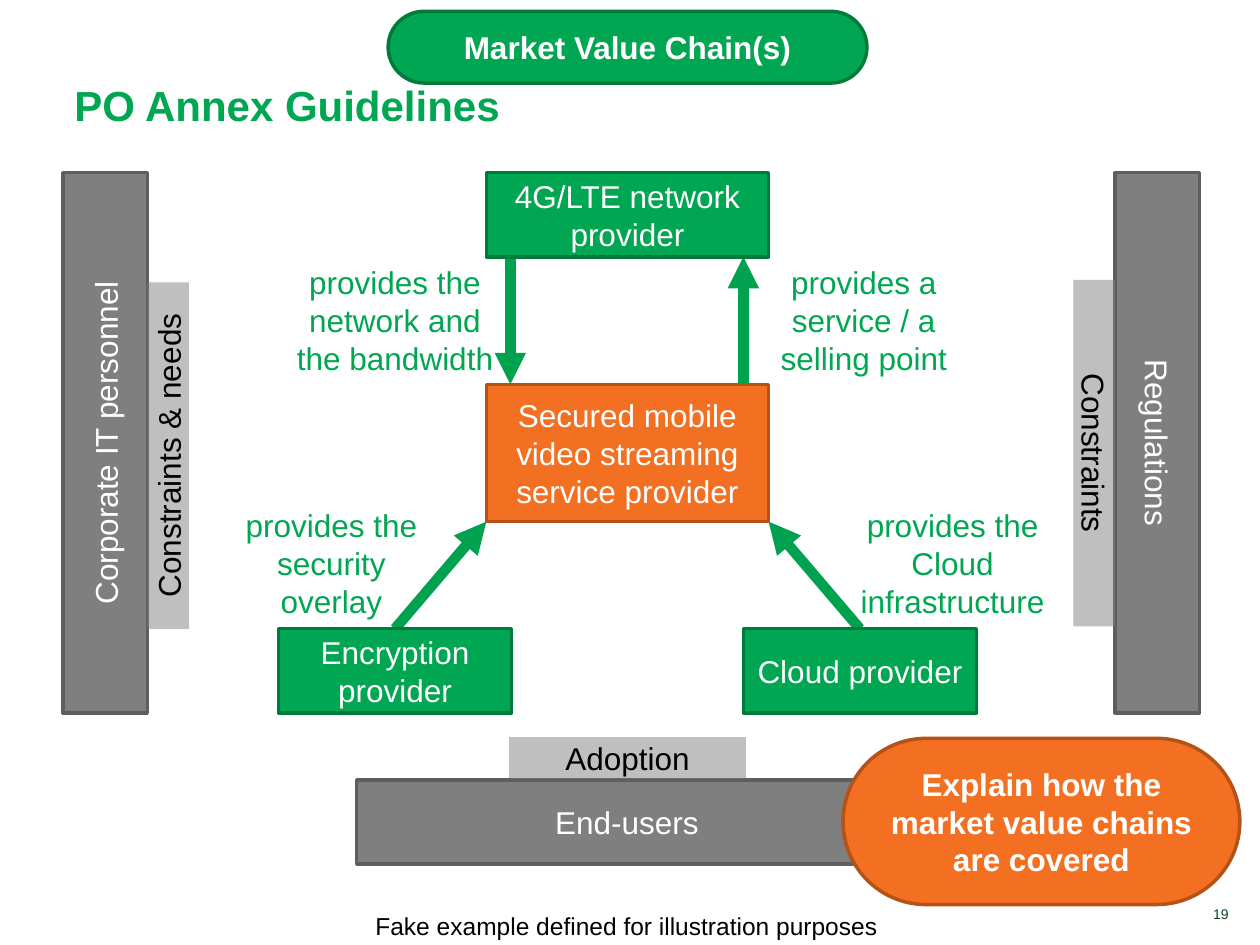
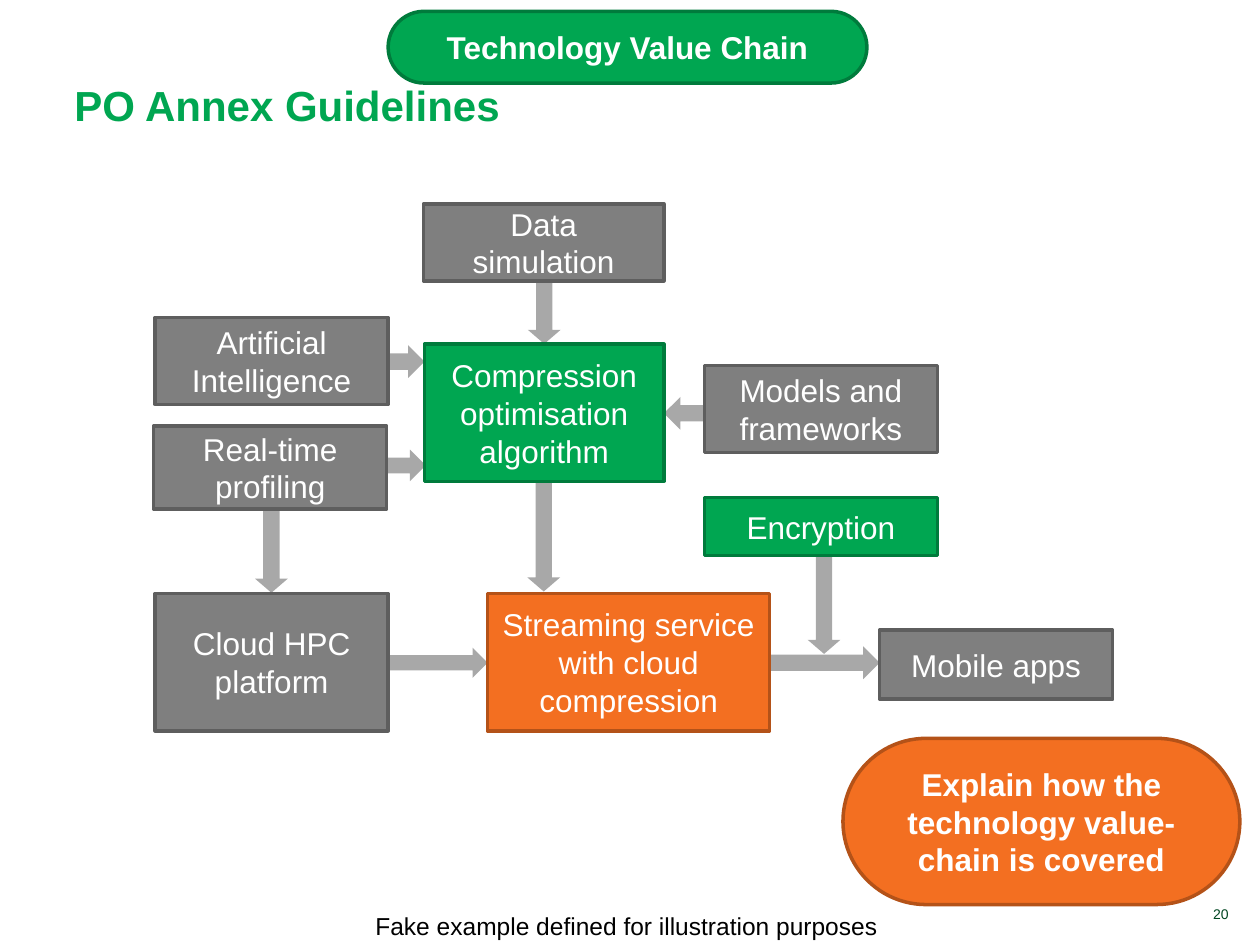
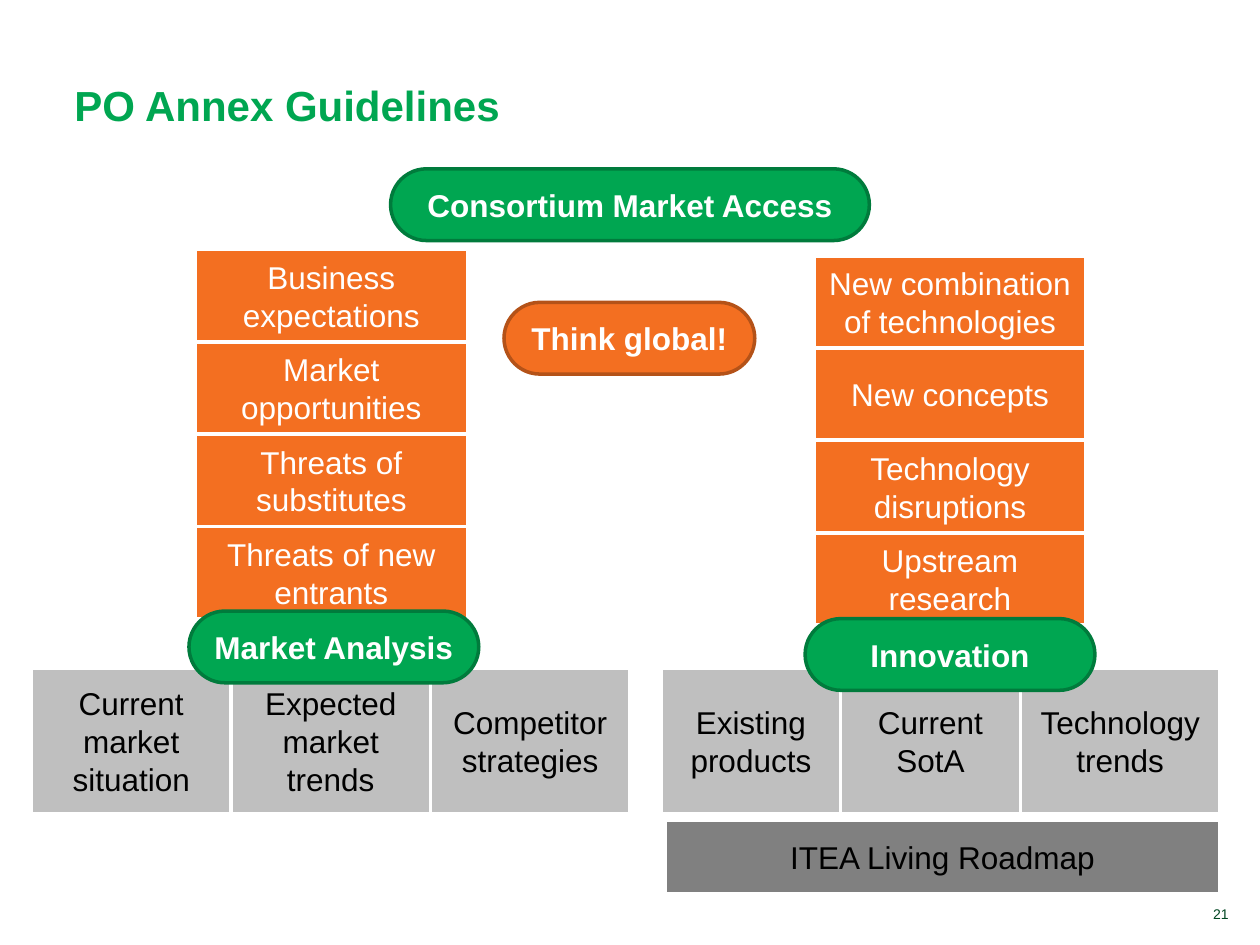
from dataclasses import dataclass
from typing import Any

from lxml import etree
from pptx import Presentation
from pptx import util as u
from pptx.dml.color import RGBColor
from pptx.enum import shapes, text
from pptx.oxml.ns import qn

FONT = "Arial"
GREEN, DARK_GREEN, ARROW_GREEN = "00A651", "007B3C", "00A24F"
ORANGE, DARK_ORANGE = "F36F21", "B45218"
GREY, DARK_GREY, ARROW_GREY = "7F7F7F", "5E5E5E", "A8A8A8"
MID_GREY, LIGHT_GREY = "808080", "BFBFBF"
WHITE, BLACK, NUMBER_GREEN = "FFFFFF", "000000", "004621"

RECT = shapes.MSO_SHAPE.RECTANGLE
PILL = shapes.MSO_SHAPE.ROUNDED_RECTANGLE
ARROW = shapes.MSO_SHAPE.RIGHT_ARROW
LEFT, CENTER, RIGHT = text.PP_ALIGN.LEFT, text.PP_ALIGN.CENTER, text.PP_ALIGN.RIGHT

PILL_HEIGHT = 41
SIDE_TOP = 98.6
PARTNER_WIDTH, PARTNER_HEIGHT = 133.2, 48.2
STACK_WIDTH, STACK_HEIGHT, STACK_STEP = 155.5, 52.6, 52.8
BASE_TOP, BASE_HEIGHT = 381.6, 83.5


@dataclass(frozen=True)
class Style:
    fill: str
    line: str | None = None
    color: str = WHITE
    bold: bool = False
    shape: Any = RECT
    alpha: int = 100


@dataclass(frozen=True)
class Box:
    words: str
    left: float
    top: float
    width: float
    height: float
    style: Style
    rotation: int = 0


@dataclass(frozen=True)
class Label:
    words: str
    left: float
    top: float
    width: float
    height: float
    size: int = 18
    color: str = GREEN
    align: Any = CENTER
    anchor: Any = text.MSO_ANCHOR.TOP
    wrap: bool = True


@dataclass(frozen=True)
class BlockArrow:
    left: float
    top: float
    length: float
    thickness: float = 18.7
    rotation: int = 0


GREEN_BOX = Style(GREEN, DARK_GREEN)
ORANGE_BOX = Style(ORANGE, DARK_ORANGE)
GREY_BOX = Style(GREY, DARK_GREY)
NOTE = Style(MID_GREY, color=BLACK, alpha=50)
GREEN_PILL = Style(GREEN, DARK_GREEN, bold=True, shape=PILL)
ORANGE_PILL = Style(ORANGE, DARK_ORANGE, bold=True, shape=PILL)
STACK = Style(ORANGE, WHITE)
BASE = Style(LIGHT_GREY, WHITE, BLACK)
ROADMAP = Style(MID_GREY, WHITE, BLACK)


def rgb(color: str) -> RGBColor:
    return RGBColor.from_string(color)


def write(frame: Any, words: str, size: int, color: str, align: Any, bold: bool = False) -> None:
    frame.text = words
    for para in frame.paragraphs:
        para.alignment = align
        para.font.name = FONT
        para.font.size = u.Pt(size)
        para.font.bold = bold
        para.font.color.rgb = rgb(color)


def draw_box(page: Any, box: Box) -> Any:
    style = box.style
    shape = page.shapes.add_shape(
        style.shape, u.Pt(box.left), u.Pt(box.top), u.Pt(box.width), u.Pt(box.height))
    shape.rotation = box.rotation
    shape.shadow.inherit = False
    shape.fill.solid()
    shape.fill.fore_color.rgb = rgb(style.fill)
    if style.alpha < 100:
        fill_color = shape.element.spPr.find(f"{qn('a:solidFill')}/{qn('a:srgbClr')}")
        etree.SubElement(fill_color, qn("a:alpha"), val=str(style.alpha * 1000))
    if style.line:
        shape.line.color.rgb = rgb(style.line)
        shape.line.width = u.Pt(2)
    else:
        shape.line.fill.background()
    if style.shape == PILL:
        shape.adjustments[0] = 0.5
    if box.words:
        shape.text_frame.vertical_anchor = text.MSO_ANCHOR.MIDDLE
        write(shape.text_frame, box.words, 18, style.color, CENTER, style.bold)
    return shape


def draw_label(page: Any, label: Label) -> None:
    frame = page.shapes.add_textbox(
        u.Pt(label.left), u.Pt(label.top), u.Pt(label.width), u.Pt(label.height)).text_frame
    frame.word_wrap = label.wrap
    frame.auto_size = text.MSO_AUTO_SIZE.SHAPE_TO_FIT_TEXT
    frame.vertical_anchor = label.anchor
    write(frame, label.words, label.size, label.color, label.align)


def draw_block_arrow(page: Any, arrow: BlockArrow) -> None:
    shape = draw_box(page, Box("", arrow.left, arrow.top, arrow.length, arrow.thickness,
                               Style(ARROW_GREY, shape=ARROW), arrow.rotation))
    if arrow.rotation == 90:
        shape.adjustments[1] = 0.43


def draw_arrow(page: Any, x1: float, y1: float, x2: float, y2: float) -> Any:
    arrow = page.shapes.add_connector(
        shapes.MSO_CONNECTOR.STRAIGHT, u.Pt(x1), u.Pt(y1), u.Pt(x2), u.Pt(y2))
    arrow.line.color.rgb = rgb(ARROW_GREEN)
    arrow.line.width = u.Pt(6)
    properties = arrow.element.spPr
    etree.SubElement(properties.find(qn("a:ln")), qn("a:tailEnd"), type="triangle")
    etree.SubElement(properties, qn("a:effectLst"))
    return arrow


def add_page(deck: Any, number: int) -> Any:
    page = deck.slides.add_slide(deck.slide_layouts[5])
    title = page.shapes.title
    title.left, title.top = u.Pt(35.3), u.Pt(12.2)
    title.width, title.height = u.Pt(490.3), u.Pt(65.5)
    title.text_frame.vertical_anchor = text.MSO_ANCHOR.BOTTOM
    write(title.text_frame, "PO Annex Guidelines", 24, GREEN, LEFT, True)
    draw_label(page, Label(str(number), 614.9, 514.1, 94.3, 16.6, 8, NUMBER_GREEN,
                           RIGHT, text.MSO_ANCHOR.BOTTOM))
    return page


def add_example_frame(page: Any, heading: str, advice: str) -> None:
    draw_box(page, Box(heading, 221.8, 6.5, 273.6, PILL_HEIGHT, GREEN_PILL))
    draw_box(page, Box(advice, 481.7, 421.9, 226.8, 95, ORANGE_PILL))
    draw_label(page, Label("Fake example defined for illustration purposes",
                           207.4, 517, 302.4, 24.5, 14, BLACK, LEFT, wrap=False))


def add_market_chain(deck: Any) -> None:
    page = add_page(deck, 19)
    provider_left, provider_width = 277.9, 161.3
    provider_right = provider_left + provider_width
    provider_top, provider_bottom = 219.6, 298.1
    network_bottom = SIDE_TOP + PARTNER_HEIGHT
    partner_top = 359.3

    from_cloud = draw_arrow(page, 491.4, partner_top, provider_right, provider_bottom)
    from_encryption = draw_arrow(page, 225.7, partner_top, provider_left, provider_bottom)
    draw_arrow(page, 424.8, provider_top, 424.8, network_bottom)
    draw_arrow(page, 291.6, network_bottom, 291.6, provider_top)

    draw_box(page, Box("Secured mobile video streaming service provider", provider_left,
                       provider_top, provider_width, provider_bottom - provider_top, ORANGE_BOX))
    draw_box(page, Box("4G/LTE network provider", provider_left, SIDE_TOP,
                       provider_width, PARTNER_HEIGHT, GREEN_BOX))
    for words, left, arrow in (("Cloud provider", 424.8, from_cloud),
                               ("Encryption provider", 159.1, from_encryption)):
        partner = draw_box(page, Box(words, left, partner_top, PARTNER_WIDTH,
                                     PARTNER_HEIGHT, GREEN_BOX))
        arrow.begin_connect(partner, 0)

    for label in (
        Label("provides the Cloud\ninfrastructure", 481.7, 285.8, 125.3, 72.7),
        Label("provides the security overlay", 126.7, 285.8, 125.3, 72.7),
        Label("provides a service / a selling point", 429.1, 146.9, 128.9, 72.7),
        Label("provides the network and the bandwidth", 159.1, 146.9, 133.2, 72.7),
    ):
        draw_label(page, label)

    for words, left, top, rotation in (("Corporate IT personnel", -94.3, 229, 270),
                                       ("Regulations", 506.9, 229, 90),
                                       ("End-users", 203.8, 445.7, 0)):
        draw_box(page, Box(words, left, top, 308.9, PARTNER_HEIGHT, GREY_BOX, rotation))
    add_example_frame(page, "Market Value Chain(s)",
                      "Explain how the market value chains are covered")
    for words, left, top, width, rotation in (("Adoption", 290.9, 421.2, 135.4, 0),
                                              ("Constraints & needs", -2.9, 248.4, 198, 270),
                                              ("Constraints", 526.3, 247, 198, 90)):
        draw_box(page, Box(words, left, top, width, 23.8, NOTE, rotation))


def add_technology_chain(deck: Any) -> None:
    page = add_page(deck, 20)
    for arrow in (
        BlockArrow(379.4, 226.8, 23, rotation=180),
        BlockArrow(221, 257, 22.3, 18),
        BlockArrow(221, 197.3, 21.6),
        BlockArrow(293, 169.2, 36, rotation=90),
        BlockArrow(131, 305.3, 48.2, rotation=90),
        BlockArrow(279.4, 297.4, 62.6, rotation=90),
        BlockArrow(442.8, 336.2, 56.2, rotation=90),
        BlockArrow(222.5, 370.1, 56.2, 17.3),
        BlockArrow(439.2, 369.4, 63.4),
    ):
        draw_block_arrow(page, arrow)
    add_example_frame(page, "Technology Value Chain",
                      "Explain how the technology value-chain is covered")
    for box in (
        Box("Streaming service\nwith cloud compression", 278.6, 339.1, 161.3, 78.5, ORANGE_BOX),
        Box("Cloud HPC platform", 88.6, 339.1, PARTNER_WIDTH, 78.5, GREY_BOX),
        Box("Mobile apps", 502.6, 360, PARTNER_WIDTH, 39.6, GREY_BOX),
        Box("Encryption", 402.5, 284.4, PARTNER_WIDTH, 33.1, GREEN_BOX),
        Box("Compression optimisation algorithm", 242.6, 196.6, 136.8, 78.5, GREEN_BOX),
        Box("Real-time profiling", 87.8, 243.4, PARTNER_WIDTH, 47.5, GREY_BOX),
        Box("Artificial Intelligence", 88.6, 181.4, PARTNER_WIDTH, 49.7, GREY_BOX),
        Box("Models and frameworks", 402.5, 208.8, PARTNER_WIDTH, 49.7, GREY_BOX),
        Box("Data simulation", 241.9, 116.6, 137.5, 43.9, GREY_BOX),
    ):
        draw_box(page, box)


def draw_base(page: Any, left: float, parts: dict[str, float]) -> None:
    for words, width in parts.items():
        draw_box(page, Box(words, left, BASE_TOP, width, BASE_HEIGHT, BASE))
        left += width


def draw_stack(page: Any, left: float, top: float, topics: list[str]) -> None:
    for row, words in enumerate(topics):
        draw_box(page, Box(words, left, top + row * STACK_STEP,
                           STACK_WIDTH, STACK_HEIGHT, STACK))


def add_market_access(deck: Any) -> None:
    page = add_page(deck, 21)
    draw_base(page, 18, {"Current market situation": 114, "Expected market trends": 114,
                         "Competitor strategies": 114})
    draw_base(page, 378, {"Existing products": 102.2, "Current SotA": 103,
                          "Technology trends": 113.8})
    draw_stack(page, 111.6, 142.6, ["Business expectations", "Market opportunities",
                                    "Threats of substitutes", "Threats of new entrants"])
    draw_stack(page, 465.1, 146.2, ["New combination of technologies", "New concepts",
                                    "Technology disruptions", "Upstream research"])
    for words, left, top, width, style in (
        ("Consortium Market Access", 223.2, 96.5, 273.6, GREEN_PILL),
        ("Market Analysis", 108, 349.2, 165.6, GREEN_PILL),
        ("Innovation", 460.1, 353.5, 165.6, GREEN_PILL),
        ("Think global!", 288, 172.8, 143.3, ORANGE_PILL),
    ):
        draw_box(page, Box(words, left, top, width, PILL_HEIGHT, style))
    draw_box(page, Box("ITEA Living Roadmap", 380.2, 468.7, 316.8, 41.8, ROADMAP))


def main() -> None:
    deck = Presentation()
    deck.slide_width, deck.slide_height = u.Pt(720), u.Pt(540)
    add_market_chain(deck)
    add_technology_chain(deck)
    add_market_access(deck)
    deck.save("out.pptx")


if __name__ == "__main__":
    main()
